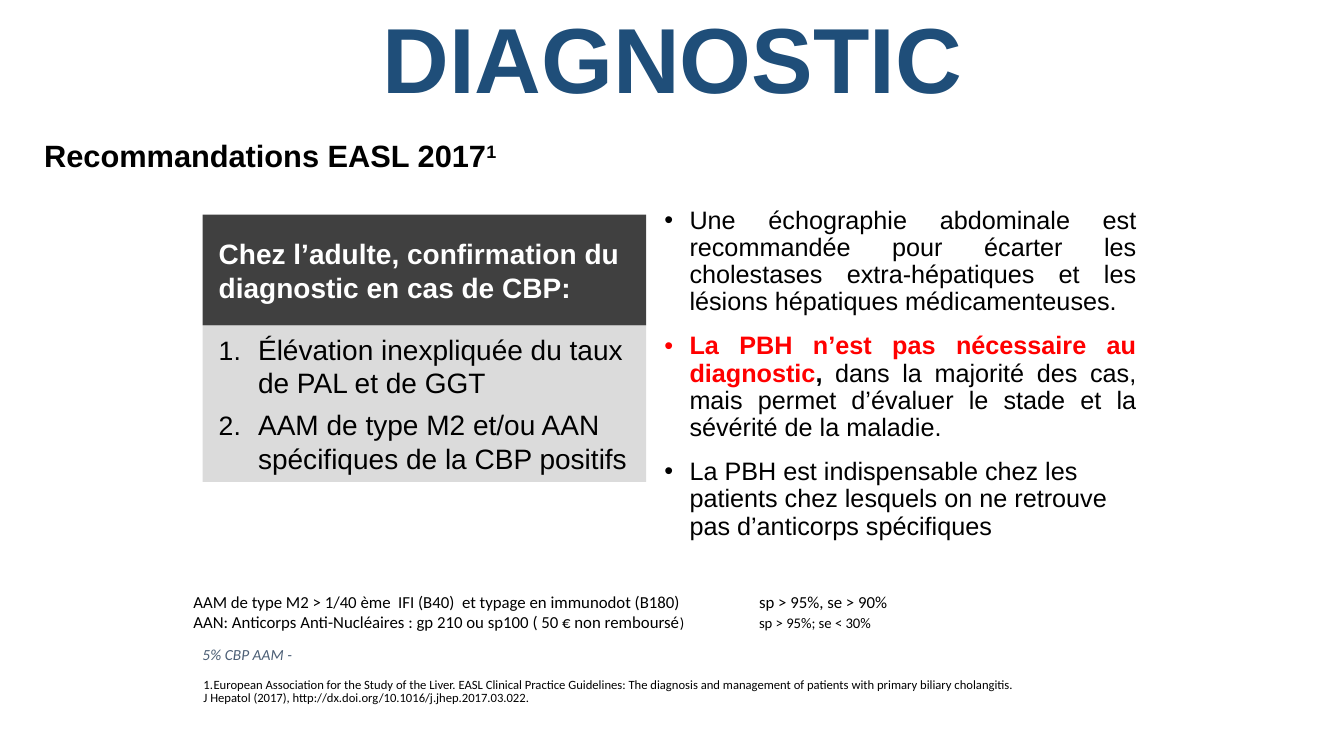
from dataclasses import dataclass

from lxml.etree import SubElement
from pptx import Presentation
from pptx.dml.color import RGBColor
from pptx.enum.shapes import MSO_SHAPE
from pptx.enum.text import MSO_ANCHOR, MSO_AUTO_SIZE, PP_ALIGN
from pptx.oxml.ns import qn
from pptx.util import Emu, Pt

EMU_PER_PX = 9144  # 100 px to the inch


def px(length):
    return Emu(length * EMU_PER_PX)


@dataclass(frozen=True)
class Theme:
    heading_font: str = "Arial"
    note_font: str = "Calibri"
    navy: str = "1F4E79"
    slate: str = "4C5F76"
    black: str = "000000"
    white: str = "FFFFFF"
    red: str = "FF0000"
    charcoal: str = "404040"
    grey: str = "A6A6A6"
    title_size: float = 66
    subtitle_size: float = 22
    panel_size: float = 20
    body_size: float = 18
    note_size: float = 12
    remark_size: float = 11
    small_size: float = 10.5
    reference_size: float = 9


class SlideBuilder:
    def __init__(self, presentation, theme):
        self.theme = theme
        self.slide = presentation.slides.add_slide(presentation.slide_layouts[5])

    def format_run(self, run, size, color, font=None, bold=False, italic=False, superscript=False):
        run.font.name = font or self.theme.heading_font
        run.font.size = Pt(size)
        run.font.color.rgb = RGBColor.from_string(color)
        run.font.bold = bold
        run.font.italic = italic
        if superscript:
            run._r.get_or_add_rPr().set("baseline", "30000")

    def fill_text(self, shape, paragraphs, size, color, anchor=MSO_ANCHOR.TOP,
                  align=PP_ALIGN.LEFT, spacing=1.0, after=0, **style):
        """Each paragraph is a string or a list of (text, run style) pairs."""
        frame = shape.text_frame
        frame.word_wrap = True
        frame.auto_size = MSO_AUTO_SIZE.NONE
        frame.vertical_anchor = anchor
        for index, content in enumerate(paragraphs):
            paragraph = frame.add_paragraph() if index else frame.paragraphs[0]
            paragraph.alignment = align
            paragraph.line_spacing = spacing
            paragraph.space_after = Pt(after)
            parts = [(content, {})] if isinstance(content, str) else content
            for text, changes in parts:
                run = paragraph.add_run()
                run.text = text
                self.format_run(run, **{"size": size, "color": color, **style, **changes})
        return frame.paragraphs

    def title(self, box, text):
        shape = self.slide.shapes.title
        shape.left, shape.top, shape.width, shape.height = map(px, box)
        self.fill_text(shape, [text], self.theme.title_size, self.theme.navy, MSO_ANCHOR.MIDDLE,
                       PP_ALIGN.CENTER, spacing=0.9, bold=True)

    def text(self, box, paragraphs, size, color, **options):
        shape = self.slide.shapes.add_textbox(*map(px, box))
        return self.fill_text(shape, paragraphs, size, color, **options)

    def panel(self, box, paragraphs, fill, color, opacity=100, **options):
        shape = self.slide.shapes.add_shape(MSO_SHAPE.RECTANGLE, *map(px, box))
        shape.shadow.inherit = False
        shape.line.fill.background()
        shape.fill.solid()
        shape.fill.fore_color.rgb = RGBColor.from_string(fill)
        if opacity < 100:
            fill_color = shape._element.spPr.find(qn("a:solidFill"))[0]
            SubElement(fill_color, qn("a:alpha")).set("val", str(opacity * 1000))
        shape.text_frame.margin_left = shape.text_frame.margin_right = px(16)
        return self.fill_text(shape, paragraphs, self.theme.panel_size, color,
                              MSO_ANCHOR.MIDDLE, **options)

    def bullet(self, paragraph, indent, numbered=False, percent=100):
        properties = paragraph._p.get_or_add_pPr()
        properties.set("marL", str(px(indent)))
        properties.set("indent", str(-px(indent)))
        SubElement(properties, qn("a:buSzPct")).set("val", str(percent * 1000))
        SubElement(properties, qn("a:buFont")).set("typeface", paragraph.runs[0].font.name)
        if numbered:
            SubElement(properties, qn("a:buAutoNum")).set("type", "arabicPeriod")
        else:
            SubElement(properties, qn("a:buChar")).set("char", "•")

    def tab_stop(self, paragraph, position):
        tabs = SubElement(paragraph._p.get_or_add_pPr(), qn("a:tabLst"))
        tab = SubElement(tabs, qn("a:tab"))
        tab.set("pos", str(px(position)))
        tab.set("algn", "l")


def main():
    presentation = Presentation()
    presentation.slide_width, presentation.slide_height = px(1333), px(750)
    theme = Theme()
    builder = SlideBuilder(presentation, theme)

    # Title and subtitle
    builder.title((173, 10, 988, 106), "DIAGNOSTIC")
    builder.text((34, 135, 1267, 44),
                 [[("Recommandations EASL 2017", {}), ("1", {"superscript": True})]],
                 theme.subtitle_size, theme.black, spacing=0.9, after=12, bold=True)

    # Recommendations on the right
    recommendations = builder.text((649, 201, 488, 394), [
        "Une échographie abdominale est recommandée pour écarter les cholestases "
        "extra-hépatiques et les lésions hépatiques médicamenteuses.",
        [("La PBH n’est pas nécessaire au diagnostic", {"color": theme.red, "bold": True}),
         (",", {"bold": True}),
         (" dans la majorité des cas, mais permet d’évaluer le stade et la sévérité "
          "de la maladie.", {})],
        "La PBH est indispensable chez les patients chez lesquels on ne retrouve "
        "pas d’anticorps spécifiques",
    ], theme.body_size, theme.black, align=PP_ALIGN.JUSTIFY, spacing=0.9, after=12)
    recommendations[-1].alignment = PP_ALIGN.LEFT
    for paragraph in recommendations:
        builder.bullet(paragraph, 25)

    # Diagnostic criteria panel
    criteria = builder.panel((201, 323, 440, 155), [
        "Élévation inexpliquée du taux de PAL et de GGT",
        "AAM de type M2 et/ou AAN spécifiques de la CBP positifs",
    ], theme.grey, theme.black, opacity=40, after=6)
    for paragraph in criteria:
        builder.bullet(paragraph, 39, numbered=True, percent=95)
    builder.panel((201, 213, 440, 110),
                  ["Chez l’adulte, confirmation du diagnostic en cas de CBP:"],
                  theme.charcoal, theme.white, bold=True)

    # Antibody notes, with the performance figures on a tab stop
    notes = builder.text((182, 582, 943, 50), [
        "AAM de type M2 > 1/40 ème  IFI (B40)  et typage en immunodot (B180)\tsp > 95%, se > 90%",
        [("AAN: Anticorps Anti-Nucléaires : gp 210 ou sp100 ( 50 € non remboursé", {}),
         (")\tsp > 95%; se < 30%", {"size": theme.small_size})],
    ], theme.note_size, theme.black, font=theme.note_font)
    for paragraph in notes:
        builder.tab_stop(paragraph, 561)
    builder.text((191, 635, 852, 29), ["5% CBP AAM -"], theme.remark_size, theme.slate,
                 anchor=MSO_ANCHOR.MIDDLE, font=theme.note_font, italic=True)

    # Reference
    reference = builder.text((192, 668, 930, 37), [
        "European Association for the Study of the Liver. EASL Clinical Practice Guidelines: "
        "The diagnosis and management of patients with primary biliary cholangitis.",
        "J Hepatol (2017), http://dx.doi.org/10.1016/j.jhep.2017.03.022.",
    ], theme.reference_size, theme.black, anchor=MSO_ANCHOR.BOTTOM, spacing=0.9,
        font=theme.note_font)
    builder.bullet(reference[0], 10, numbered=True)

    presentation.save("out.pptx")


if __name__ == "__main__":
    main()
